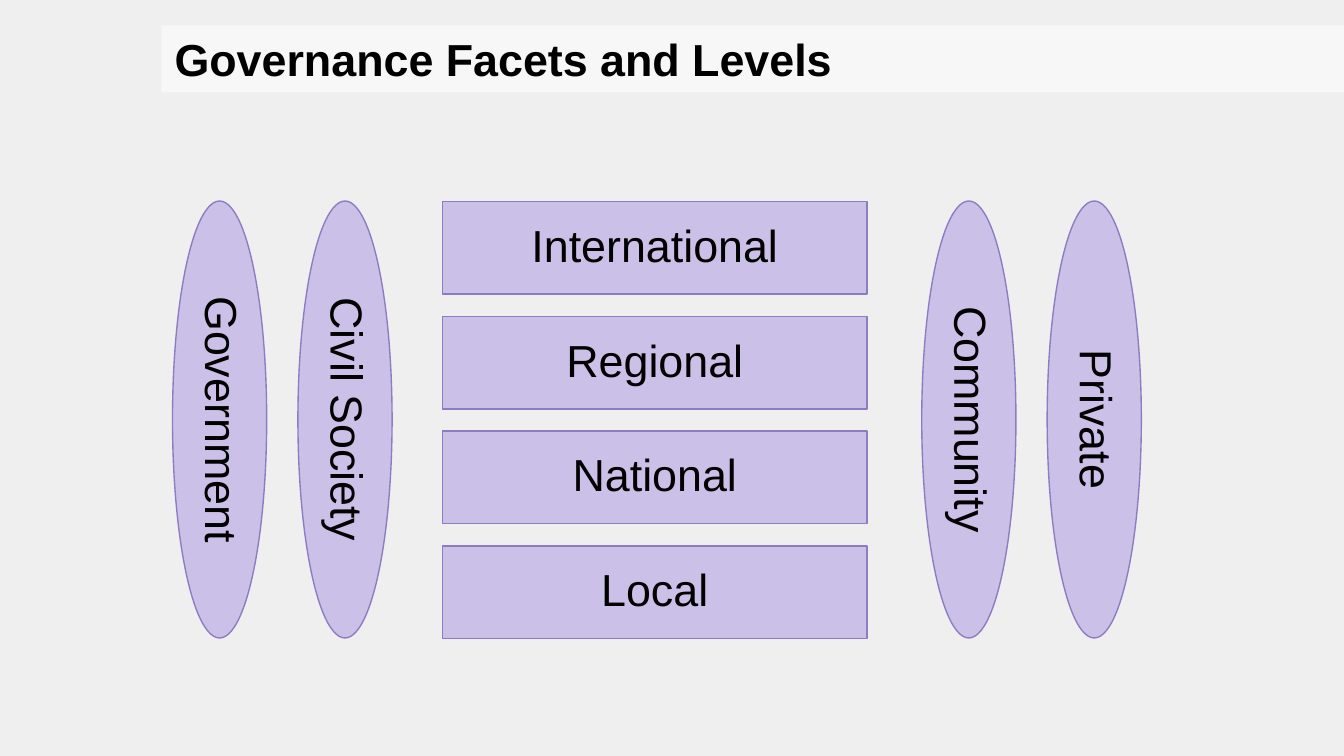
from lxml import etree
from pptx import Presentation
from pptx.dml.color import RGBColor
from pptx.enum import shapes, text
from pptx.oxml.ns import qn
from pptx.util import Cm, Pt

TITLE = "Governance Facets and Levels"
LEVELS = ["International", "Regional", "National", "Local"]
FACET_PAIRS = [(4.15, ["Government", "Civil Society"]),
               (18.31, ["Community", "Private"])]
COLORS = {"background": "EFEFEF", "fill": "C0B2E5", "line": "8E7CC3",
          "banner": "FFFFFF", "text": "000000"}

LEVEL_LEFT, LEVEL_TOP, LEVEL_W, LEVEL_H, LEVEL_STEP = 8.36, 3.81, 8.03, 1.75, 2.17
FACET_LENGTH, FACET_THICKNESS, FACET_STEP, FACET_MIDDLE = 8.26, 1.78, 2.37, 7.93


def rgb(name):
    return RGBColor.from_string(COLORS[name])


def add_block(s, kind, box, label, fill, opacity):
    sp = s.shapes.add_shape(kind, *(Cm(v) for v in box))
    sp.shadow.inherit = False
    sp.fill.solid()
    sp.fill.fore_color.rgb = rgb(fill)
    color = sp.fill._xPr.find(qn("a:solidFill"))[0]
    etree.SubElement(color, qn("a:alpha")).set("val", str(opacity * 1000))
    tf = sp.text_frame
    tf.word_wrap = True
    tf.vertical_anchor = text.MSO_ANCHOR.MIDDLE
    p = tf.paragraphs[0]
    p.text = label
    p.font.name = "Arial"
    p.font.size = Pt(24)
    p.font.color.rgb = rgb("text")
    return sp, p


def add_label(s, kind, box, label):
    sp, p = add_block(s, kind, box, label, "fill", 76)
    sp.line.color.rgb = rgb("line")
    sp.line.width = Pt(0.75)
    p.alignment = text.PP_ALIGN.CENTER
    p.line_spacing = 0.9
    return sp


prs = Presentation()
prs.slide_width, prs.slide_height = Cm(25.4), Cm(14.29)
s = prs.slides.add_slide(prs.slide_layouts[6])
s.background.fill.solid()
s.background.fill.fore_color.rgb = rgb("background")

for i, level in enumerate(LEVELS):
    box = (LEVEL_LEFT, LEVEL_TOP + i * LEVEL_STEP, LEVEL_W, LEVEL_H)
    add_label(s, shapes.MSO_SHAPE.RECTANGLE, box, level)

for first_center, facets in FACET_PAIRS:
    for i, facet in enumerate(facets):
        center = first_center + i * FACET_STEP
        box = (center - FACET_LENGTH / 2, FACET_MIDDLE - FACET_THICKNESS / 2,
               FACET_LENGTH, FACET_THICKNESS)
        add_label(s, shapes.MSO_SHAPE.OVAL, box, facet).rotation = 90

banner, p = add_block(s, shapes.MSO_SHAPE.RECTANGLE, (3.05, 0.48, 22.35, 1.27),
                      TITLE, "banner", 55)
banner.line.fill.background()
p.alignment = text.PP_ALIGN.LEFT
p.font.bold = True

prs.save("out.pptx")
